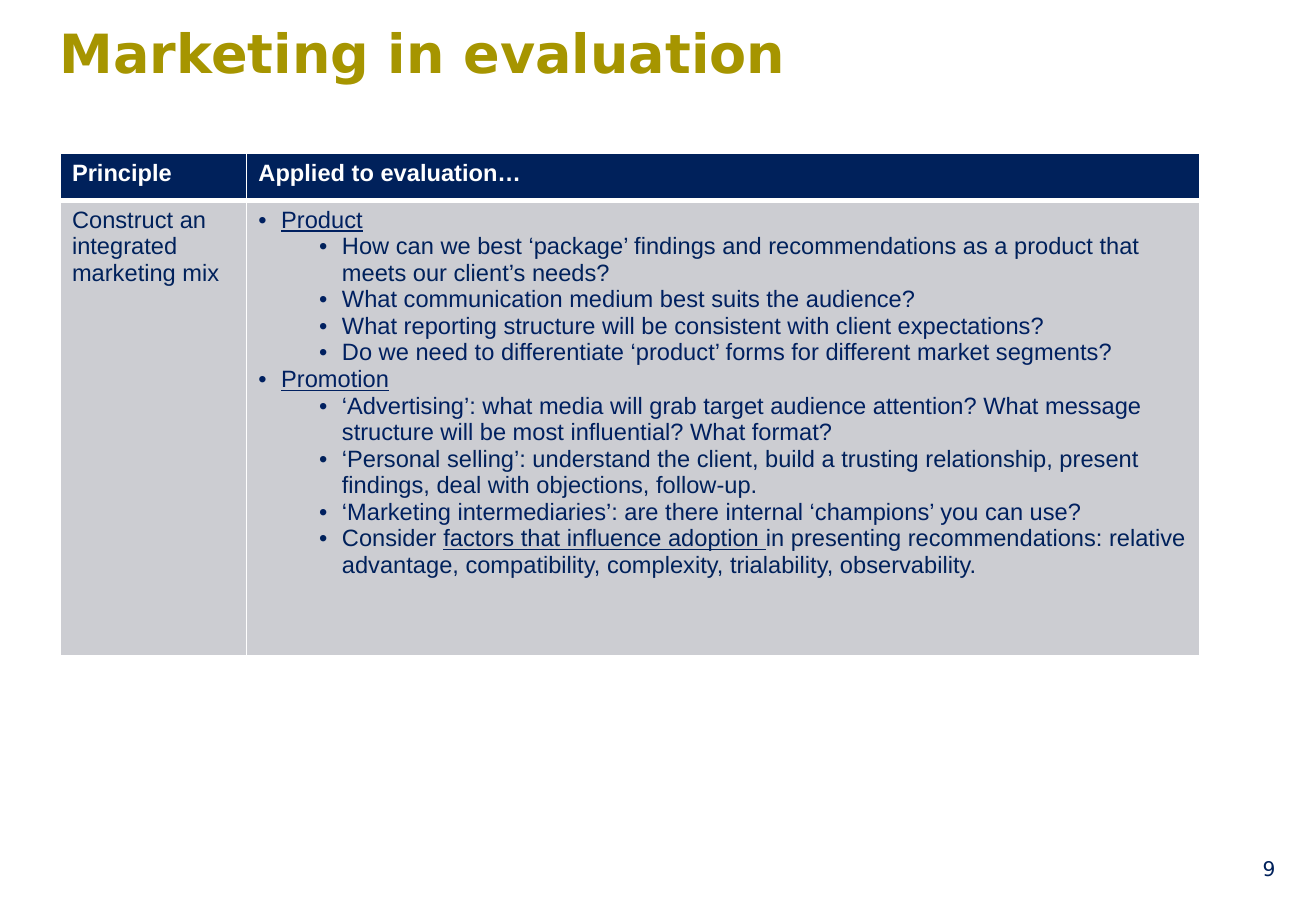
from dataclasses import dataclass

from lxml.etree import SubElement
from pptx import Presentation
from pptx.dml.color import RGBColor
from pptx.enum.text import MSO_ANCHOR, PP_ALIGN
from pptx.oxml.ns import qn
from pptx.util import Pt


@dataclass(frozen=True)
class Theme:
    heading_font: str = "DejaVu Sans"
    body_font: str = "Arial"
    gold: str = "A69500"
    navy: str = "00215B"
    blue: str = "002060"
    grey: str = "CCCDD2"
    white: str = "FFFFFF"
    title_size: int = 32
    body_size: int = 14
    number_size: int = 12


THEME = Theme()
COLUMN_WIDTHS = (110.5, 565)
ROW_HEIGHTS = (28, 270)
HEADERS = ("Principle", "Applied to evaluation…")
PRINCIPLE = "Construct an integrated marketing mix"
# Each point: level, colour, spans; every second span is underlined.
POINTS = (
    (0, THEME.blue, ("", "Product")),
    (1, THEME.navy, ("How can we best ‘package’ findings and recommendations "
                     "as a product that meets our client’s needs?",)),
    (1, THEME.blue, ("What communication medium best suits the audience?",)),
    (1, THEME.blue, ("What reporting structure will be consistent with "
                     "client expectations?",)),
    (1, THEME.blue, ("Do we need to differentiate ‘product’ forms for "
                     "different market segments?",)),
    (0, THEME.blue, ("", "Promotion")),
    (1, THEME.blue, ("‘Advertising’: what media will grab target audience attention? "
                     "What message structure will be most influential? What format?",)),
    (1, THEME.navy, ("‘Personal selling’: understand the client, build a trusting "
                     "relationship, present findings, deal with objections, follow-up.",)),
    (1, THEME.blue, ("‘Marketing intermediaries’: are there internal ‘champions’ "
                     "you can use?",)),
    (1, THEME.navy, ("Consider ", "factors that influence adoption ",
                     "in presenting recommendations: relative advantage, compatibility, "
                     "complexity, trialability, observability.")),
)


def style(para, name, size, color, bold=False):
    font = para.font
    font.name, font.size, font.bold = name, Pt(size), bold
    font.color.rgb = RGBColor.from_string(color)


def add_text(slide, text, place, size, color, bold=False, margins=(7.2, 3.6),
             align=PP_ALIGN.LEFT, anchor=MSO_ANCHOR.TOP):
    frame = slide.shapes.add_textbox(*map(Pt, place)).text_frame
    frame.word_wrap = True
    frame.vertical_anchor = anchor
    frame.margin_left = frame.margin_right = Pt(margins[0])
    frame.margin_top = frame.margin_bottom = Pt(margins[1])
    para = frame.paragraphs[0]
    para.text = text
    para.alignment = align
    style(para, THEME.heading_font, size, color, bold)


def set_borders(cell, widths):
    """Draw white left, right, top and bottom borders of the given widths."""
    properties = cell._tc.get_or_add_tcPr()
    for side, width in zip("LRTB", widths):
        line = SubElement(properties, qn(f"a:ln{side}"), w=str(Pt(width)))
        fill = SubElement(line, qn("a:solidFill"))
        SubElement(fill, qn("a:srgbClr"), val=THEME.white)


def format_cell(cell, fill, widths):
    set_borders(cell, widths)
    cell.fill.solid()
    cell.fill.fore_color.rgb = RGBColor.from_string(fill)


def fill_cell(cell, text, color, bold=False):
    cell.text = text
    style(cell.text_frame.paragraphs[0], THEME.body_font, THEME.body_size, color, bold)


def add_bullet(para, level, color, spans):
    para.level = level
    properties = para._p.get_or_add_pPr()
    properties.set("marL", str(Pt(13.5 + 36 * level)))
    properties.set("indent", str(Pt(-13.5)))
    SubElement(properties, qn("a:buFont"), typeface=THEME.body_font)
    SubElement(properties, qn("a:buChar"), char="•")
    style(para, THEME.body_font, THEME.body_size, color)
    for index, text in enumerate(spans):
        if text:
            span = para.add_run()
            span.text = text
            if index % 2:
                span.font.underline = True


def add_principle_table(slide):
    table = slide.shapes.add_table(
        2, 2, Pt(35.5), Pt(91), Pt(sum(COLUMN_WIDTHS)), Pt(sum(ROW_HEIGHTS))).table
    table.horz_banding = False
    for column, width in zip(table.columns, COLUMN_WIDTHS):
        column.width = Pt(width)
    for row, height in zip(table.rows, ROW_HEIGHTS):
        row.height = Pt(height)
    for column, header in enumerate(HEADERS):
        format_cell(table.cell(0, column), THEME.navy, (1, 1, 1, 3))
        fill_cell(table.cell(0, column), header, THEME.white, bold=True)
        format_cell(table.cell(1, column), THEME.grey, (1, 1, 3, 1))
    fill_cell(table.cell(1, 0), PRINCIPLE, THEME.navy)
    frame = table.cell(1, 1).text_frame
    for index, point in enumerate(POINTS):
        para = frame.add_paragraph() if index else frame.paragraphs[0]
        add_bullet(para, *point)


def main():
    deck = Presentation()
    deck.slide_width, deck.slide_height = Pt(780), Pt(540)
    slide = deck.slides.add_slide(deck.slide_layouts[6])
    add_text(slide, "Marketing in evaluation", (35.5, 11.5, 675.5, 73),
             THEME.title_size, THEME.gold, bold=True, margins=(0, 0))
    add_principle_table(slide)
    add_text(slide, "9", (581, 500.5, 182, 29), THEME.number_size, THEME.navy,
             align=PP_ALIGN.RIGHT, anchor=MSO_ANCHOR.MIDDLE)
    deck.save("out.pptx")


if __name__ == "__main__":
    main()
